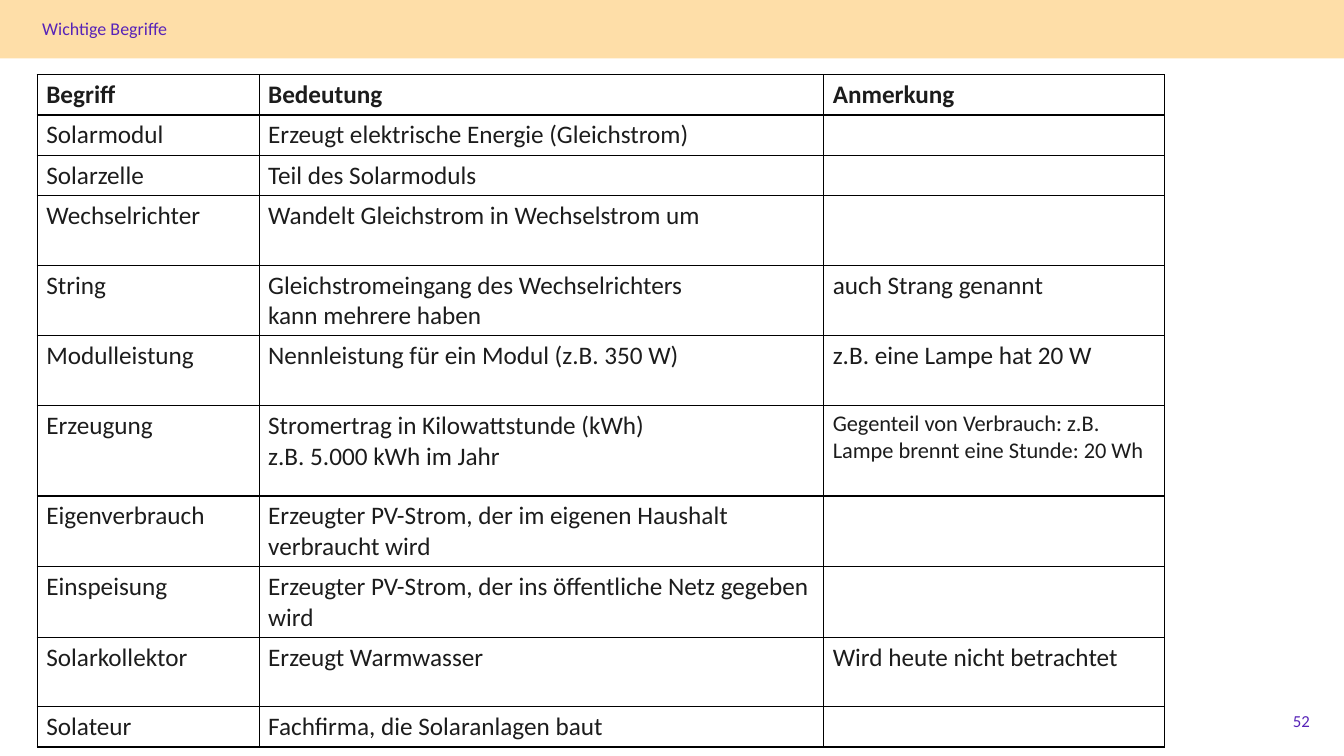
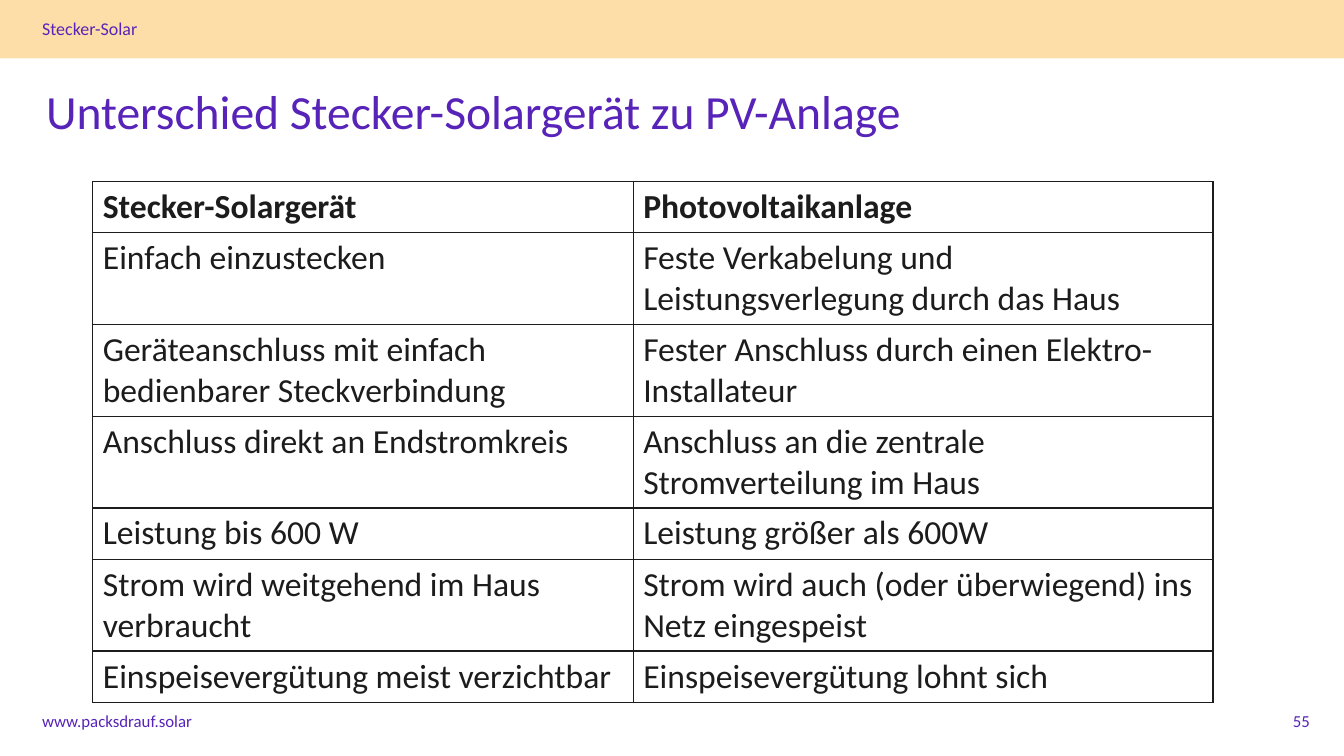
from lxml import etree
from pptx import Presentation
from pptx.dml.color import RGBColor
from pptx.enum.shapes import MSO_SHAPE
from pptx.enum.text import MSO_ANCHOR, PP_ALIGN
from pptx.oxml.ns import qn
from pptx.util import Pt

PX = 9144  # 100 px to the inch
FONT = "Calibri"
PURPLE = RGBColor(0x57, 0x23, 0xB8)
SAND = RGBColor(0xFE, 0xDE, 0xA8)
INK = RGBColor(0x1C, 0x1C, 0x1C)
BLACK = RGBColor(0, 0, 0)
RECT = MSO_SHAPE.RECTANGLE
TOP, MIDDLE = MSO_ANCHOR.TOP, MSO_ANCHOR.MIDDLE
LEFT, RIGHT = PP_ALIGN.LEFT, PP_ALIGN.RIGHT

# Text formats: box, size, anchor, alignment, line spacing
STYLES = {
    "section": ((32, 18, 635, 27), 12.8, TOP, LEFT, 0.7),
    "title": ((36, 78, 1150, 71), 34, MIDDLE, LEFT, 0.9),
    "footer": ((32, 695, 300, 40), 12, MIDDLE, LEFT, 1.0),
    "number": ((1009, 695, 300, 40), 12, MIDDLE, RIGHT, 1.0),
}

# Slide contents
SLIDES = [
    {
        "texts": {"section": "Wichtige Begriffe", "number": "52"},
        "at": (37, 74),
        "cols": [220, 560, 338],
        "rows": [40, 40, 40, 69, 70, 69, 90, 70, 70, 69, 40],
        "size": 18,
        "small": {(6, 2): 16},
        "line": BLACK,
        "insets": {"margin_left": 9, "margin_top": 5, "margin_right": 9, "margin_bottom": 4},
        "cells": [
            ["Begriff", "Bedeutung", "Anmerkung"],
            ["Solarmodul", "Erzeugt elektrische Energie (Gleichstrom)", ""],
            ["Solarzelle", "Teil des Solarmoduls", ""],
            ["Wechselrichter", "Wandelt Gleichstrom in Wechselstrom um", ""],
            ["String", "Gleichstromeingang des Wechselrichters\vkann mehrere haben",
             "auch Strang genannt"],
            ["Modulleistung", "Nennleistung für ein Modul (z.B. 350 W)",
             "z.B. eine Lampe hat 20 W"],
            ["Erzeugung", "Stromertrag in Kilowattstunde (kWh)\nz.B. 5.000 kWh im Jahr",
             "Gegenteil von Verbrauch: z.B. Lampe brennt eine Stunde: 20 Wh"],
            ["Eigenverbrauch", "Erzeugter PV-Strom, der im eigenen Haushalt verbraucht wird", ""],
            ["Einspeisung", "Erzeugter PV-Strom, der ins öffentliche Netz gegeben wird", ""],
            ["Solarkollektor", "Erzeugt Warmwasser", "Wird heute nicht betrachtet"],
            ["Solateur", "Fachfirma, die Solaranlagen baut", ""],
        ],
    },
    {
        "texts": {
            "section": "Stecker-Solar",
            "title": "Unterschied Stecker-Solargerät zu PV-Anlage",
            "footer": "www.packsdrauf.solar",
            "number": "55",
        },
        "at": (92, 180),
        "cols": [536, 575],
        "rows": [51, 91, 91, 91, 51, 91, 51],
        "size": 24,
        "small": {},
        "line": INK,
        "insets": {"margin_left": 10, "margin_top": 5, "margin_right": 10, "margin_bottom": 5},
        "cells": [
            ["Stecker-Solargerät", "Photovoltaikanlage"],
            ["Einfach einzustecken", "Feste Verkabelung und Leistungsverlegung durch das Haus"],
            ["Geräteanschluss mit einfach bedienbarer Steckverbindung",
             "Fester Anschluss durch einen Elektro-Installateur"],
            ["Anschluss direkt an Endstromkreis",
             "Anschluss an die zentrale Stromverteilung im Haus"],
            ["Leistung bis 600 W", "Leistung größer als 600W"],
            ["Strom wird weitgehend im Haus verbraucht",
             "Strom wird auch (oder überwiegend) ins Netz eingespeist"],
            ["Einspeisevergütung meist verzichtbar", "Einspeisevergütung lohnt sich"],
        ],
    },
]


def set_text(tf, text, size, color, bold=False):
    tf.text = text
    fmt = {"name": FONT, "size": Pt(size), "bold": bold}
    for p in tf.paragraphs:
        for r in p.runs:
            for key, value in fmt.items():
                setattr(r.font, key, value)
            r.font.color.rgb = color


def set_borders(cell, color):
    tcPr = cell._tc.get_or_add_tcPr()
    for side in ("lnL", "lnR", "lnT", "lnB"):
        ln = etree.SubElement(tcPr, qn("a:" + side), w=str(Pt(1)))
        fill = etree.SubElement(ln, qn("a:solidFill"))
        etree.SubElement(fill, qn("a:srgbClr"), val=str(color))


prs = Presentation()
prs.slide_width, prs.slide_height = 1333 * PX, 750 * PX

for spec_row in SLIDES:
    s = prs.slides.add_slide(prs.slide_layouts[6])

    # Top band
    band = s.shapes.add_shape(RECT, 0, 0, prs.slide_width, 58 * PX)
    band.shadow.inherit = False
    band.fill.solid()
    band.fill.fore_color.rgb = SAND
    band.line.fill.background()

    # Table
    cols, rows = spec_row["cols"], spec_row["rows"]
    x, y = spec_row["at"]
    box = (x, y, sum(cols), sum(rows))
    table = s.shapes.add_table(len(rows), len(cols), *[v * PX for v in box]).table
    table.horz_banding = False
    for col, width in zip(table.columns, cols):
        col.width = width * PX
    for row, height in zip(table.rows, rows):
        row.height = height * PX
    for i, texts in enumerate(spec_row["cells"]):
        for j, text in enumerate(texts):
            cell = table.cell(i, j)
            for key, value in spec_row["insets"].items():
                setattr(cell, key, value * PX)
            set_borders(cell, spec_row["line"])
            cell.fill.background()
            size = spec_row["small"].get((i, j), spec_row["size"])
            set_text(cell.text_frame, text, size, INK, bold=i == 0)

    # Section name, title, footer and page number
    for name, text in spec_row["texts"].items():
        box, size, anchor, align, spacing = STYLES[name]
        tf = s.shapes.add_textbox(*[v * PX for v in box]).text_frame
        tf.word_wrap = True
        tf.vertical_anchor = anchor
        set_text(tf, text, size, PURPLE)
        p = tf.paragraphs[0]
        p.alignment = align
        p.line_spacing = spacing

prs.save("out.pptx")
